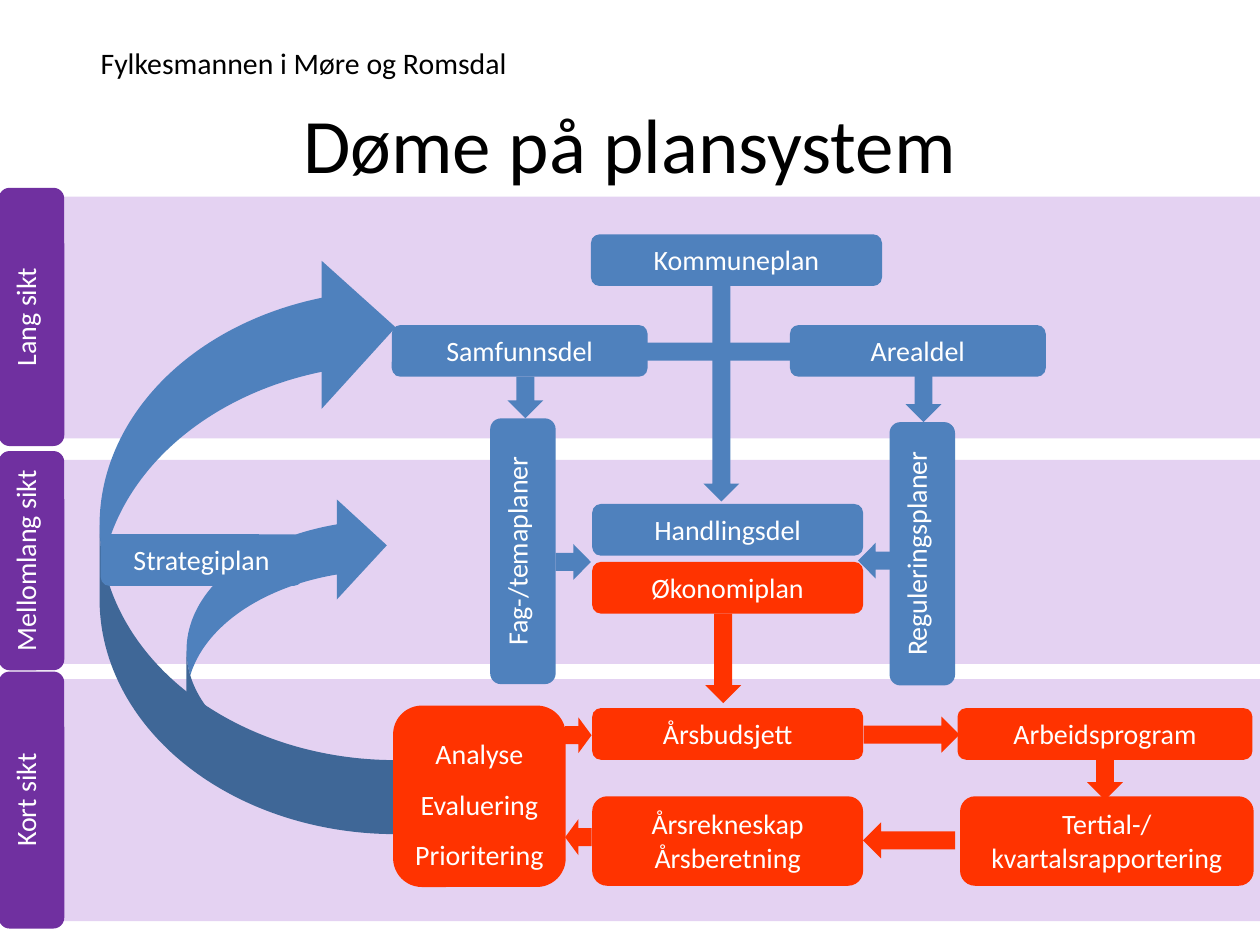
from pptx import Presentation
from pptx.dml.color import RGBColor
from pptx.enum.shapes import MSO_SHAPE as Preset
from pptx.enum.text import MSO_ANCHOR as Anchor, PP_ALIGN as Align
from pptx.util import Inches, Pt

BLUE = RGBColor(0x4F, 0x81, 0xBD)
RED = RGBColor(0xFF, 0x33, 0x00)
PURPLE = RGBColor(0x70, 0x30, 0xA0)
LILAC = RGBColor(0xE4, 0xD2, 0xF2)
WHITE = RGBColor(0xFF, 0xFF, 0xFF)
BLACK = RGBColor(0x00, 0x00, 0x00)

deck = Presentation()
deck.slide_width, deck.slide_height = Inches(10), Inches(7.5)
slide = deck.slides.add_slide(deck.slide_layouts[6])

# The grid has 100 columns and 75 rows.
COL, ROW = deck.slide_width / 100, deck.slide_height / 75


def add_filled(preset, color, left, top, width, height, rotation=0):
    shape = slide.shapes.add_shape(
        preset, round(left * COL), round(top * ROW), round(width * COL), round(height * ROW))
    shape.shadow.inherit = False
    shape.fill.solid()
    shape.fill.fore_color.rgb = color
    shape.line.fill.background()
    shape.rotation = rotation
    return shape


def write_lines(frame, lines, size, color, align, anchor, spacing=None):
    frame.word_wrap = True
    frame.vertical_anchor = anchor
    for number, line in enumerate(lines):
        paragraph = frame.paragraphs[0] if number == 0 else frame.add_paragraph()
        paragraph.text = line
        paragraph.alignment = align
        paragraph.line_spacing = spacing
        formats = {"name": "Calibri", "size": Pt(size)}
        for key, value in formats.items():
            setattr(paragraph.font, key, value)
        paragraph.font.color.rgb = color


# Background bands, one per planning horizon
for top, height in [(53.9, 19.2), (36.5, 16.2), (15.6, 19.2)]:
    add_filled(Preset.RECTANGLE, LILAC, 0, top, 100, height)

headings = [
    ("Fylkesmannen i Møre og Romsdal", 17, Align.LEFT, (7, 3, 37.5, 3.9)),
    ("Døme på plansystem", 44, Align.CENTER, (4.7, 7, 90.6, 8.6)),
]
for heading, size, align, (left, top, width, height) in headings:
    box = slide.shapes.add_textbox(
        round(left * COL), round(top * ROW), round(width * COL), round(height * ROW))
    write_lines(box.text_frame, [heading], size, BLACK, align, Anchor.MIDDLE)

# Lines, colour, (left, top, width, height), upright text, line spacing
plans = [
    (["Kommuneplan"], BLUE, (46.9, 18.6, 23.1, 4.1), False, None),
    (["Samfunnsdel"], BLUE, (31.1, 25.8, 20.3, 4.1), False, None),
    (["Arealdel"], BLUE, (62.7, 25.8, 20.3, 4.1), False, None),
    (["Handlingsdel"], BLUE, (47, 40, 21.5, 4.1), False, None),
    (["Økonomiplan"], RED, (47, 44.6, 21.5, 4.1), False, None),
    (["Årsbudsjett"], RED, (47, 56.2, 21.5, 4.1), False, None),
    (["Årsrekneskap", "Årsberetning"], RED, (47, 63.2, 21.5, 7.1), False, None),
    (["Tertial-/kvartalsrapportering"], RED, (76.2, 63.2, 23.3, 7.1), False, None),
    (["Arbeidsprogram"], RED, (76, 56.2, 23.4, 4.1), False, None),
    (["Fag-/temaplaner"], BLUE, (38.9, 33.2, 5.2, 21.1), True, None),
    (["Reguleringsplaner"], BLUE, (70.6, 33.5, 5.2, 20.9), True, None),
]
horizons_and_cycle = [
    (["Lang sikt"], PURPLE, (-0.1, 14.9, 5.2, 20.5), True, None),
    (["Mellomlang sikt"], PURPLE, (-0.1, 35.8, 5.2, 17.4), True, None),
    (["Kort sikt"], PURPLE, (-0.1, 53.3, 5.2, 20.4), True, None),
    (["Analyse", "Evaluering", "Prioritering"], RED, (31.2, 56, 13.7, 14.4), False, 1.5),
    (["Strategiplan"], BLUE, (8, 42.4, 16, 4.1), False, None),
]

# Straight arrows: colour, centre column, centre row, length, rotation
DOWN, LEFT, RIGHT = 0, 90, 270
ARROW_WIDTH = 2.85
arrows = [
    (BLUE, 57.25, 31.25, 17.1, DOWN),
    (RED, 57.4, 52.25, 7.1, DOWN),
    (RED, 72.35, 58.3, 7.6, RIGHT),
    (RED, 72.15, 66.7, 7.3, LEFT),
    (RED, 87.7, 61.9, 3.2, DOWN),
    (BLUE, 57.75, 27.9, 13, RIGHT),
    (BLUE, 73.3, 31.4, 4.2, DOWN),
    (BLUE, 41.7, 31.55, 3.3, DOWN),
    (BLUE, 45.5, 44.6, 2.8, RIGHT),
    (BLUE, 69.5, 44.5, 2.8, LEFT),
    (RED, 45.9, 58.35, 2.1, RIGHT),
    (RED, 45.9, 66.45, 2.1, LEFT),
]
feedback_arrows = [(14.8, 39.3, 15.9, 26.6), (7.9, 20.1, 23.5, 46.1)]

for layer in (plans, horizons_and_cycle):
    for lines, color, area, upright, spacing in layer:
        label = add_filled(Preset.ROUNDED_RECTANGLE, color, *area).text_frame
        write_lines(label, lines, 16, WHITE, Align.CENTER, Anchor.TOP, spacing)
        if upright:
            label._txBody.bodyPr.set("vert", "vert270")
    if layer is plans:
        for area in feedback_arrows:
            add_filled(Preset.CURVED_LEFT_ARROW, BLUE, *area, rotation=180)
        for color, middle, center, length, rotation in arrows:
            add_filled(Preset.DOWN_ARROW, color, middle - ARROW_WIDTH / 2,
                       center - length / 2, ARROW_WIDTH, length, rotation)

deck.save("out.pptx")
